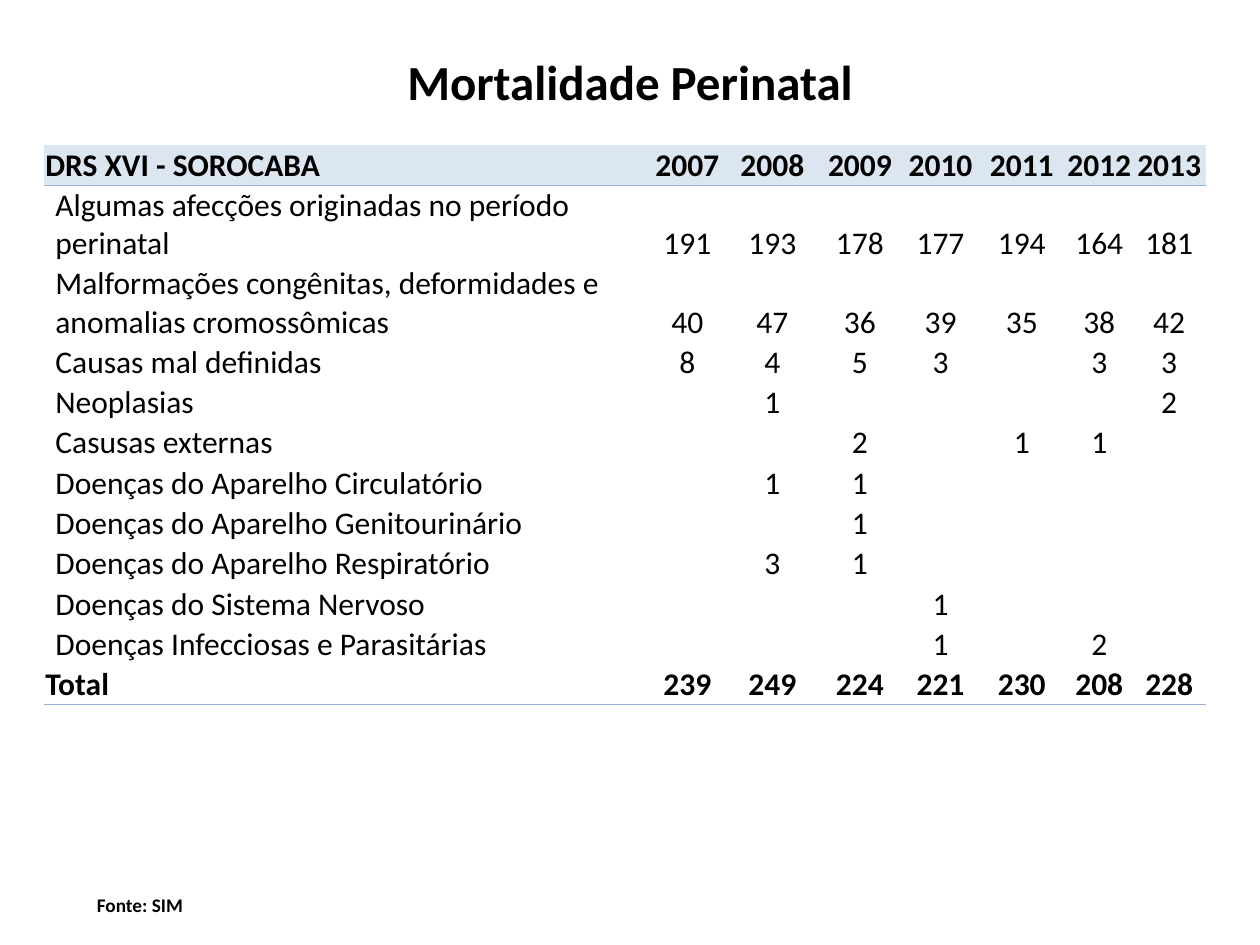
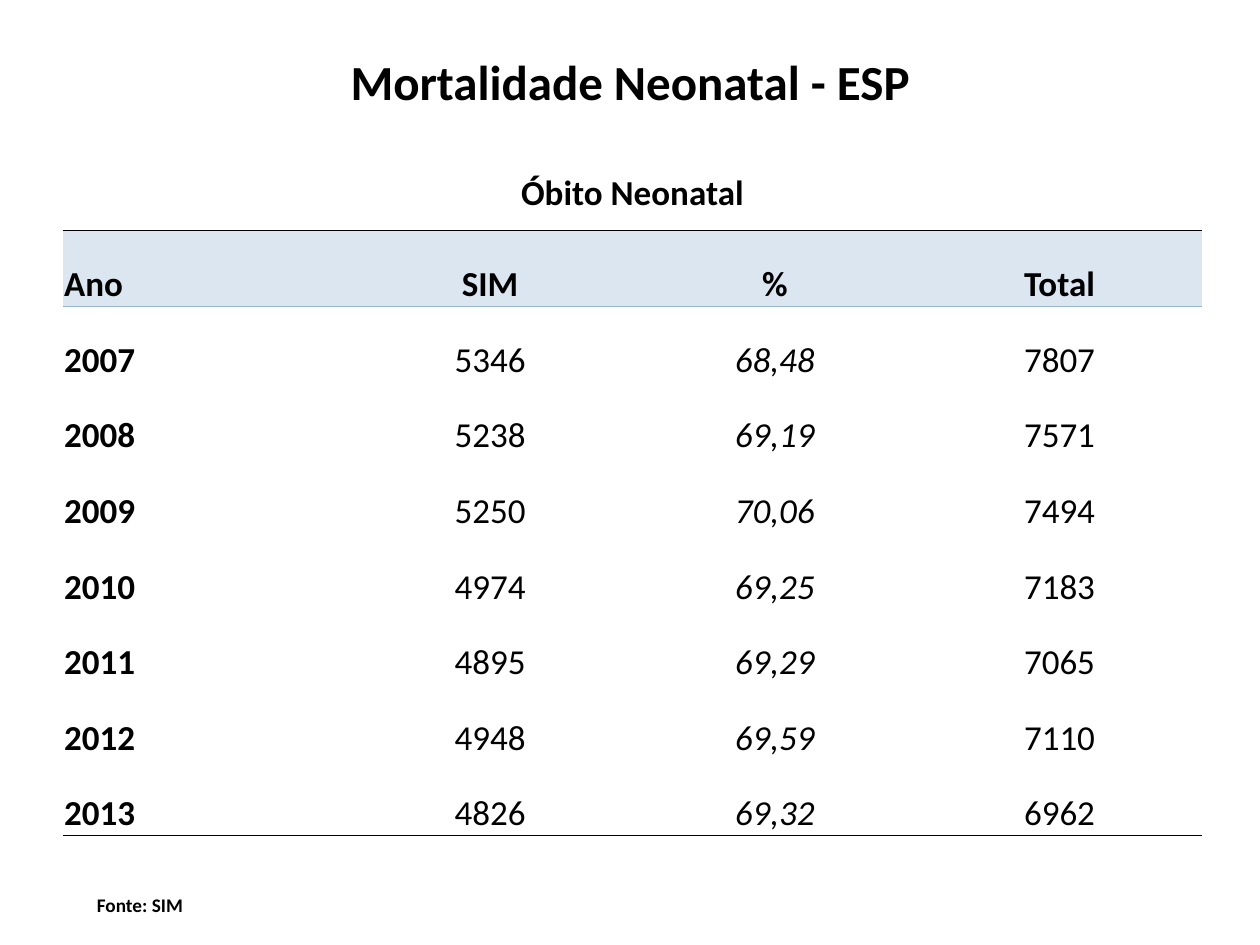
from dataclasses import dataclass, field

from lxml.etree import SubElement
from pptx import Presentation
from pptx.dml.color import RGBColor
from pptx.enum.text import MSO_ANCHOR, MSO_AUTO_SIZE, PP_ALIGN
from pptx.oxml import parse_xml
from pptx.oxml.ns import nsdecls, qn
from pptx.util import Inches, Pt

BLACK = RGBColor(0x00, 0x00, 0x00)
HEADER_BLUE = RGBColor(0xDC, 0xE6, 0xF1)
RULE_BLUE = RGBColor(0x95, 0xB3, 0xD7)
FONT = "Calibri"
NO_STYLE = "{2D5ABB26-0587-4C30-8999-92F81FD0307C}"
CELL_MARGINS = {
    "margin_left": Inches(0.01),
    "margin_right": Inches(0.01),
    "margin_top": Inches(0.01),
    "margin_bottom": Inches(0),
}


@dataclass(frozen=True)
class Rule:
    color: RGBColor
    width: float


THIN_BLUE = Rule(RULE_BLUE, 0.5)
BLACK_RULE = Rule(BLACK, 1)


@dataclass
class TableSpec:
    """Row indexes refer to the table rows; rules lie below their row."""
    left: float
    top: float
    col_widths: list[float]
    row_height: float
    rows: list[list[str]]
    size: float
    header_row: int
    rules: dict[int, Rule]
    bold_rows: set[int]
    bold_cols: set[int] = field(default_factory=set)
    italic_cols: set[int] = field(default_factory=set)
    indented_rows: set[int] = field(default_factory=set)
    caption_row: int | None = None


PERINATAL = TableSpec(
    left=0.35, top=1.15, row_height=0.32, size=18,
    col_widths=[4.78, 0.65, 0.7, 0.69, 0.59, 0.7, 0.53, 0.58],
    rows=[
        ["DRS XVI - SOROCABA", "2007", "2008", "2009", "2010", "2011", "2012", "2013"],
        ["Algumas afecções originadas no período perinatal",
         "191", "193", "178", "177", "194", "164", "181"],
        ["Malformações congênitas, deformidades e anomalias cromossômicas",
         "40", "47", "36", "39", "35", "38", "42"],
        ["Causas mal definidas", "8", "4", "5", "3", "", "3", "3"],
        ["Neoplasias", "", "1", "", "", "", "", "2"],
        ["Casusas externas", "", "", "2", "", "1", "1", ""],
        ["Doenças do Aparelho Circulatório", "", "1", "1", "", "", "", ""],
        ["Doenças do Aparelho Genitourinário", "", "", "1", "", "", "", ""],
        ["Doenças do Aparelho Respiratório", "", "3", "1", "", "", "", ""],
        ["Doenças do Sistema Nervoso", "", "", "", "1", "", "", ""],
        ["Doenças Infecciosas e Parasitárias", "", "", "", "1", "", "2", ""],
        ["Total", "239", "249", "224", "221", "230", "208", "228"],
    ],
    header_row=0,
    rules={0: THIN_BLUE, 11: THIN_BLUE},
    bold_rows={0, 11},
    indented_rows=set(range(1, 11)),
)

NEONATAL = TableSpec(
    left=0.5, top=1.23, row_height=0.6, size=20,
    col_widths=[2.26] * 4,
    rows=[
        ["Óbito Neonatal", "", "", ""],
        ["Ano", "SIM", "%", "Total"],
        ["2007", "5346", "68,48", "7807"],
        ["2008", "5238", "69,19", "7571"],
        ["2009", "5250", "70,06", "7494"],
        ["2010", "4974", "69,25", "7183"],
        ["2011", "4895", "69,29", "7065"],
        ["2012", "4948", "69,59", "7110"],
        ["2013", "4826", "69,32", "6962"],
    ],
    header_row=1,
    rules={0: BLACK_RULE, 1: THIN_BLUE, 8: BLACK_RULE},
    bold_rows={0, 1},
    bold_cols={0},
    italic_cols={2},
    caption_row=0,
)


def set_attrs(target, values: dict) -> None:
    for name, value in values.items():
        setattr(target, name, value)


def write(p, text: str, size: float, bold: bool = True, italic: bool = False) -> None:
    r = p.add_run()
    r.text = text
    set_attrs(r.font, {"name": FONT, "size": Pt(size), "bold": bold, "italic": italic})
    r.font.color.rgb = BLACK


def add_title(s, text: str) -> None:
    sp = s.shapes.title
    set_attrs(sp, {"left": Inches(0.5), "top": Inches(0.3),
                   "width": Inches(9), "height": Inches(0.69)})
    tf = sp.text_frame
    tf.vertical_anchor = MSO_ANCHOR.MIDDLE
    p = tf.paragraphs[0]
    p.alignment = PP_ALIGN.CENTER
    write(p, text, 28)


def add_source(s) -> None:
    sp = s.shapes.add_textbox(Inches(0.67), Inches(7.04), Inches(0.89), Inches(0.29))
    tf = sp.text_frame
    set_attrs(tf, {"word_wrap": False, "auto_size": MSO_AUTO_SIZE.SHAPE_TO_FIT_TEXT})
    write(tf.paragraphs[0], "Fonte: SIM", 11)


def set_borders(cell, above: Rule | None, below: Rule | None) -> None:
    """Put the border lines ahead of the fill, as the schema asks."""
    borders = {"lnL": None, "lnR": None, "lnT": above, "lnB": below}
    tc_pr = cell._tc.get_or_add_tcPr()
    for position, (tag, rule) in enumerate(borders.items()):
        ln = parse_xml(f"<a:{tag} {nsdecls('a')}/>")
        if rule:
            ln.set("w", str(Pt(rule.width)))
            fill = SubElement(ln, qn("a:solidFill"))
            SubElement(fill, qn("a:srgbClr")).set("val", str(rule.color))
        else:
            SubElement(ln, qn("a:noFill"))
        tc_pr.insert(position, ln)


def format_cell(cell, spec: TableSpec, row: int, col: int) -> None:
    is_caption = row == spec.caption_row
    set_attrs(cell, CELL_MARGINS)
    if col == 0 and row in spec.indented_rows:
        cell.margin_left = Inches(0.09)
    cell.vertical_anchor = MSO_ANCHOR.MIDDLE if is_caption else MSO_ANCHOR.BOTTOM
    if row == spec.header_row:
        cell.fill.solid()
        cell.fill.fore_color.rgb = HEADER_BLUE
    else:
        cell.fill.background()
    set_borders(cell, spec.rules.get(row - 1), spec.rules.get(row))

    p = cell.text_frame.paragraphs[0]
    p.alignment = PP_ALIGN.CENTER if col or is_caption else PP_ALIGN.LEFT
    if text := spec.rows[row][col]:
        write(p, text, spec.size,
              bold=row in spec.bold_rows or col in spec.bold_cols,
              italic=col in spec.italic_cols and row not in spec.bold_rows)


def add_data_table(s, spec: TableSpec) -> None:
    n_rows, n_cols = len(spec.rows), len(spec.col_widths)
    table = s.shapes.add_table(
        n_rows, n_cols, Inches(spec.left), Inches(spec.top),
        Inches(sum(spec.col_widths)), Inches(spec.row_height * n_rows)).table
    set_attrs(table, {"first_row": False, "horz_banding": False})
    table._tbl.tblPr.find(qn("a:tableStyleId")).text = NO_STYLE
    for column, width in zip(table.columns, spec.col_widths):
        column.width = Inches(width)
    for table_row in table.rows:
        table_row.height = Inches(spec.row_height)
    if spec.caption_row is not None:
        table.cell(spec.caption_row, 0).merge(table.cell(spec.caption_row, n_cols - 1))
    for row in range(n_rows):
        for col in range(n_cols):
            format_cell(table.cell(row, col), spec, row, col)


def main() -> None:
    prs = Presentation()
    set_attrs(prs, {"slide_width": Inches(10), "slide_height": Inches(7.5)})
    title_only = prs.slide_layouts[5]
    for title, spec in [("Mortalidade Perinatal", PERINATAL),
                        ("Mortalidade Neonatal - ESP", NEONATAL)]:
        s = prs.slides.add_slide(title_only)
        add_title(s, title)
        add_data_table(s, spec)
        add_source(s)
    prs.save("out.pptx")


if __name__ == "__main__":
    main()
